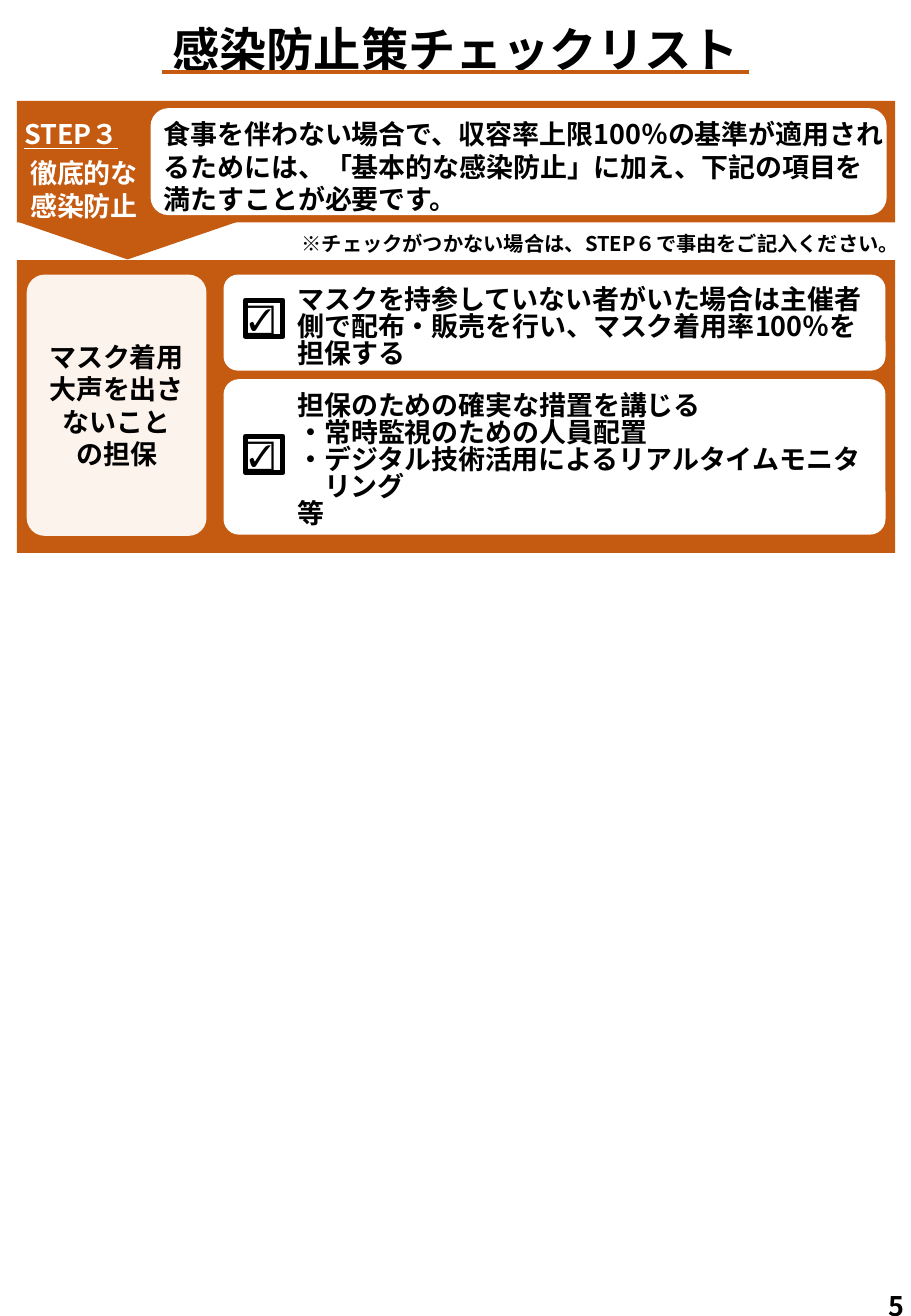
import pptx
import pptx.util
import pptx.dml.color
import pptx.enum.shapes
import pptx.enum.text
import pptx.oxml
import pptx.oxml.ns

Inches = pptx.util.Inches
Pt = pptx.util.Pt
KIND = pptx.enum.shapes.MSO_SHAPE
ALIGN = pptx.enum.text.PP_ALIGN
ANCHOR = pptx.enum.text.MSO_ANCHOR
FONT = "Noto Sans CJK JP"
RUST = "C55A11"
BLACK = "000000"
WHITE = "FFFFFF"
CREAM = "FDF3ED"


def color(code):
    return pptx.dml.color.RGBColor.from_string(code)


def write(shape, lines, size=16, font=FONT, ink=BLACK, bold=True, align=ALIGN.LEFT,
          anchor=ANCHOR.TOP, wrap=True, pitch=None, under=(), dents=None, gaps=None,
          pad=(0.1, 0.05, 0.1, 0.05)):
    """Fill a shape with lines; under, dents and gaps are keyed by line number."""
    frame = shape.text_frame
    frame.word_wrap = wrap
    frame.auto_size = pptx.enum.text.MSO_AUTO_SIZE.NONE
    frame.vertical_anchor = anchor
    (frame.margin_left, frame.margin_top,
     frame.margin_right, frame.margin_bottom) = map(Inches, pad)
    for i, line in enumerate(lines):
        para = frame.paragraphs[0] if i == 0 else frame.add_paragraph()
        para.alignment = align
        para.space_before = Pt((gaps or {}).get(i, 0))
        para.line_spacing = Pt(pitch) if pitch else 1.0
        if i in (dents or {}):
            props = para._p.get_or_add_pPr()
            props.set("marL", str(Inches(dents[i])))
            props.set("indent", "0")
        run = para.add_run()
        run.text = line
        face = run.font
        face.name, face.size, face.bold = font, Pt(size), bold
        face.underline = i in under
        face.color.rgb = color(ink)
        # East Asian characters need their own typeface entry
        east = pptx.oxml.parse_xml(
            f'<a:ea {pptx.oxml.ns.nsdecls("a")} typeface="{font}"/>')
        run._r.get_or_add_rPr().find(pptx.oxml.ns.qn("a:latin")).addnext(east)


def label(slide, box, lines, **style):
    write(slide.shapes.add_textbox(*map(Inches, box)), lines, **style)


def block(slide, kind, box, fill=None, edge=None, round=None):
    shape = slide.shapes.add_shape(kind, *map(Inches, box))
    shape.shadow.inherit = False
    if fill:
        shape.fill.solid()
        shape.fill.fore_color.rgb = color(fill)
    else:
        shape.fill.background()
    if edge:
        shape.line.color.rgb = color(edge)
        shape.line.width = Pt(3)
    else:
        shape.line.fill.background()
    if round:
        shape.adjustments[0] = round
    return shape


def head(slide, box):
    """Title with its rule."""
    left, top, width, height = box
    title = slide.shapes.title
    title.left, title.top, title.width, title.height = map(Inches, box)
    write(title, ["感染防止策チェックリスト"], size=28, align=ALIGN.CENTER)
    rule = slide.shapes.add_connector(
        pptx.enum.shapes.MSO_CONNECTOR.STRAIGHT, Inches(left + 0.85), Inches(top + 0.47),
        Inches(left + width - 0.85), Inches(top + 0.47))
    rule.line.color.rgb = color(RUST)
    rule.line.width = Pt(2.25)
    rule._element.spPr.append(
        pptx.oxml.parse_xml(f'<a:effectLst {pptx.oxml.ns.nsdecls("a")}/>'))


def step(slide, box):
    """Step banner with its arrow tip, and the note below it."""
    left, top, width, height = box
    tip = block(slide, KIND.PENTAGON, (left + 0.6, top + 0.09, 0.62, 1.81), RUST)
    tip.rotation = 90
    block(slide, KIND.RECTANGLE, box, RUST)
    block(slide, KIND.ROUNDED_RECTANGLE,
          (left + 1.1, top + 0.06, width - 1.17, height - 0.12), WHITE)
    label(slide, (left - 0.04, top + 0.09, 1.19, 0.96), ["STEP３", "徹底的な", "感染防止"],
          ink=WHITE, under=(0,), dents={1: 0.05, 2: 0.05}, gaps={1: 4})
    label(slide, (left + 1.11, top + 0.09, 6.14, 0.91),
          ["食事を伴わない場合で、収容率上限100％の基準が適用されるためには、"
           "「基本的な感染防止」に加え、下記の項目を満たすことが必要です。"])
    label(slide, (left + 1.97, top + height, 5.39, 0.33),
          ["※チェックがつかない場合は、STEP６で事由をご記入ください。"],
          size=12, align=ALIGN.RIGHT, pitch=16)


def check(slide, box, lines, tick, text, round, dents=None):
    """White card with a ticked box; tick and text are offsets from its top."""
    left, top, width, height = box
    block(slide, KIND.ROUNDED_RECTANGLE, box, WHITE, round=round)
    block(slide, KIND.RECTANGLE, (left + 0.18, top + tick, 0.31, 0.3), edge=BLACK)
    label(slide, (left + 0.51, top + text, 5.14, height), lines, pitch=16, dents=dents)
    label(slide, (left + 0.07, top + tick - 0.06, 0.55, 0.4), ["☑"],
          size=18, font="Calibri", bold=False, wrap=False)


def panel(slide, box):
    """Topic on the left, its checks on the right."""
    left, top, width, height = box
    block(slide, KIND.RECTANGLE, box, RUST)
    topic = block(slide, KIND.ROUNDED_RECTANGLE,
                  (left + 0.08, top + 0.12, 1.48, height - 0.26), CREAM, round=0.1)
    write(topic, ["マスク着用", "大声を出さないこと", "の担保"], align=ALIGN.CENTER,
          anchor=ANCHOR.MIDDLE, pad=(0.07, 0.04, 0.07, 0.04))
    side, span = left + 1.7, width - 1.78
    check(slide, (side, top + 0.12, span, 0.79),
          ["マスクを持参していない者がいた場合は主催者",
           "側で配布・販売を行い、マスク着用率100％を", "担保する"],
          tick=0.21, text=0.06, round=0.15)
    check(slide, (side, top + 0.98, span, 1.28),
          ["担保のための確実な措置を講じる", "・常時監視のための人員配置",
           "・デジタル技術活用によるリアルタイムモニタ", "リング", "等"],
          tick=0.47, text=0.07, round=0.1, dents={3: 0.22})


def main():
    deck = pptx.Presentation()
    deck.slide_width, deck.slide_height = Inches(7.5), Inches(10.83)
    slide = deck.slides.add_slide(deck.slide_layouts[5])
    head(slide, (0.48, 0.12, 6.54, 0.57))
    step(slide, (0.14, 0.83, 7.23, 1))
    panel(slide, (0.14, 2.14, 7.23, 2.41))
    # Page number
    label(slide, (7.22, 10.56, 0.28, 0.27), ["5"], wrap=False, pad=(0.1, 0.05, 0, 0))
    deck.save("out.pptx")


if __name__ == "__main__":
    main()
